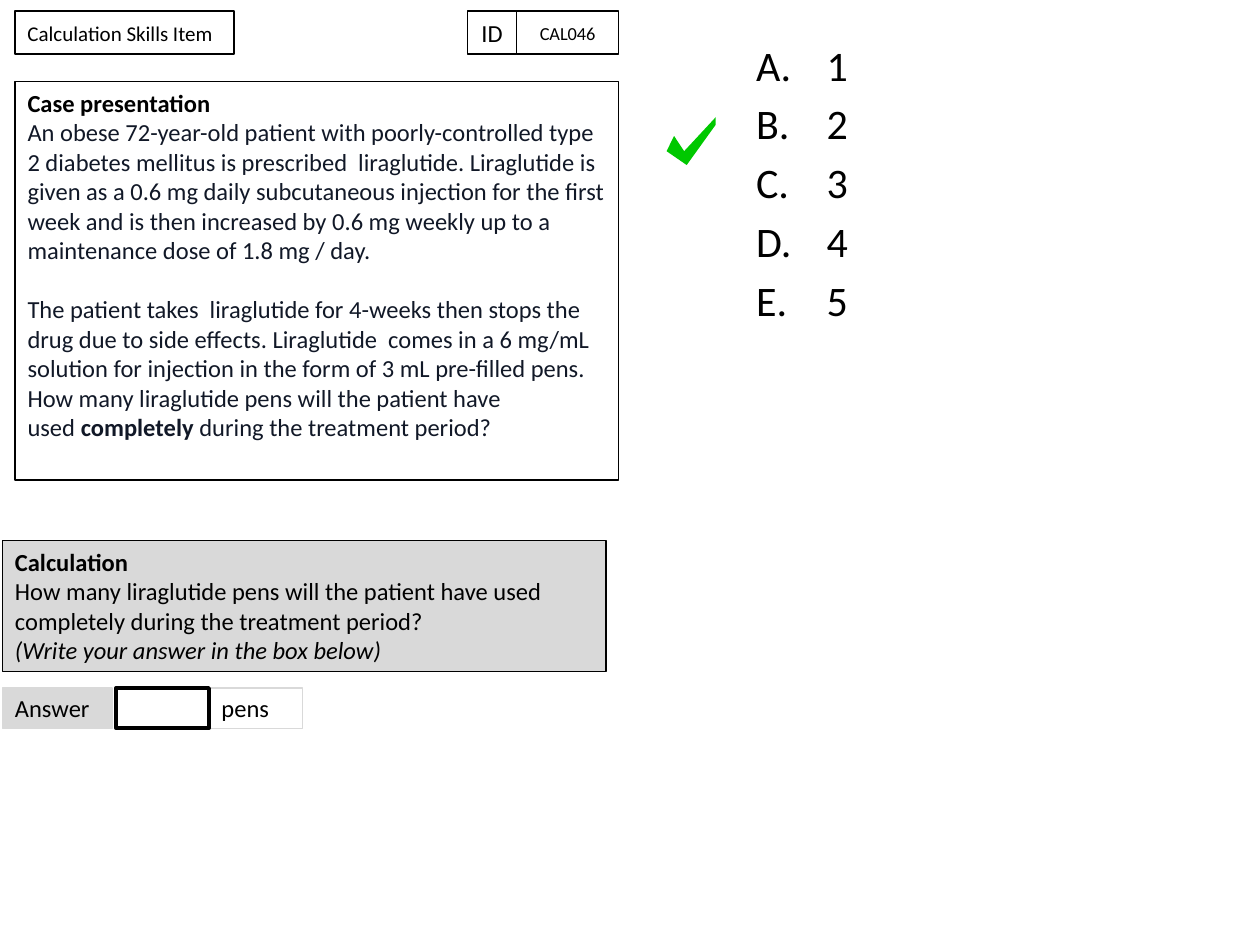
import pptx
import pptx.dml.color
import pptx.enum.text
import pptx.util
from pptx.util import Inches

COLOURS = {"ink": "000000", "body": "111827", "grey": "D9D9D9",
           "white": "FFFFFF", "tick": "00C800"}
ALIGN = pptx.enum.text.PP_ALIGN
ANCHOR = pptx.enum.text.MSO_ANCHOR
NBSP = chr(160)


def rgb(name):
    return pptx.dml.color.RGBColor.from_string(COLOURS[name])


class Card:
    """Holds the text style and the current page."""
    style = {"name": "Calibri", "size": 14, "color": "ink"}

    def __init__(self, page):
        self.page = page

    def span(self, para, text, **changes):
        span = para.add_run()
        span.text = text
        for key, value in {**self.style, **changes}.items():
            if key == "color":
                span.font.color.rgb = rgb(value)
            else:
                setattr(span.font, key, pptx.util.Pt(value) if key == "size" else value)

    def paint(self, shape, fill, line=None, width=0.75):
        shape.shadow.inherit = False
        if fill:
            shape.fill.solid()
            shape.fill.fore_color.rgb = rgb(fill)
        else:
            shape.fill.background()
        if line:
            shape.line.color.rgb = rgb(line)
            shape.line.width = pptx.util.Pt(width)
        else:
            shape.line.fill.background()

    def box(self, place, paras=(), fill=None, line="ink", width=0.75,
            align=ALIGN.LEFT, anchor=ANCHOR.MIDDLE):
        """Each paragraph is (space before, [(text, format changes), ...])."""
        box = self.page.shapes.add_shape(
            pptx.enum.shapes.MSO_SHAPE.RECTANGLE, *map(Inches, place))
        self.paint(box, fill, line, width)
        frame = box.text_frame
        frame.word_wrap = True
        frame.vertical_anchor = anchor
        for index, (space, spans) in enumerate(paras):
            para = frame.add_paragraph() if index else frame.paragraphs[0]
            para.alignment = align
            if space:
                para.space_before = pptx.util.Pt(space)
            for text, changes in spans:
                self.span(para, text, **changes)

    def label(self, place, text, size=14, **options):
        self.box(place, [(0, [(text, {"size": size})])], **options)

    def options(self, place, answers):
        """Lettered answers in the body placeholder."""
        body = self.page.placeholders[1]
        body.left, body.top, body.width, body.height = map(Inches, place)
        frame = body.text_frame
        for index, answer in enumerate(answers):
            para = frame.add_paragraph() if index else frame.paragraphs[0]
            para.space_before = pptx.util.Pt(4.8 if index else 0)
            props = para._p.get_or_add_pPr()
            props.set("marL", str(Inches(0.56)))
            props.set("indent", str(-Inches(0.56)))
            bullet = pptx.oxml.parse_xml(
                '<a:buAutoNum xmlns:a="http://schemas.openxmlformats.org/'
                'drawingml/2006/main" type="alphaUcPeriod"/>')
            props.append(bullet)
            self.span(para, answer, size=24)

    def outline(self, points, fill):
        start, *rest = [tuple(map(Inches, point)) for point in points]
        builder = self.page.shapes.build_freeform(*start)
        builder.add_line_segments(rest, close=True)
        self.paint(builder.convert_to_shape(), fill)


def main():
    deck = pptx.Presentation()
    deck.slide_width, deck.slide_height = Inches(10), Inches(7.5)
    page = deck.slides.add_slide(deck.slide_layouts[1])
    title = page.shapes.title._element
    title.getparent().remove(title)
    card = Card(page)

    # Answer options
    card.options((5.9, 0.26, 3.31, 6.4), "12345")

    # Header
    card.label((0.12, 0.09, 1.74, 0.34), "Calculation Skills Item", 12,
               fill="white", width=1)
    card.label((4.1, 0.09, 0.81, 0.34), "CAL046", 10.5,
               fill="white", width=1, align=ALIGN.CENTER)
    card.label((3.71, 0.09, 0.39, 0.34), "ID", width=1, align=ALIGN.CENTER)

    # Case presentation
    plain = {"color": "body"}
    bold = {"bold": True}
    card.box((0.12, 0.65, 4.79, 3.16), [
        (0, [("Case presentation", bold)]),
        (0, [("An obese 72-year-old patient with poorly-controlled type 2 diabetes "
              "mellitus is prescribed  liraglutide. Liraglutide is given as a 0.6 mg "
              "daily subcutaneous injection for the first week and is then increased "
              "by 0.6 mg weekly up to a maintenance dose of 1.8 mg / day.", plain)]),
        (17, [("The patient takes  liraglutide for 4-weeks then stops the drug due to "
               "side effects. Liraglutide  comes in a 6 mg/mL solution for injection "
               "in the form of 3 mL pre-filled pens.", plain)]),
        (0, [("How many liraglutide pens will the patient have used" + NBSP, plain),
             ("completely", {**plain, **bold}),
             (NBSP + "during the treatment period?", plain)]),
    ], anchor=ANCHOR.TOP)

    # Calculation question
    card.box((0.02, 4.29, 4.79, 1.04), [
        (0, [("Calculation", bold)]),
        (0, [("How many liraglutide pens will the patient have used completely "
              "during the treatment period?", {})]),
        (0, [("(Write your answer in the box below)", {"italic": True})]),
    ], fill="grey", anchor=ANCHOR.TOP)

    # Answer row
    card.label((0.02, 5.46, 0.87, 0.32), "Answer", fill="grey", line="grey")
    card.label((1.66, 5.46, 0.74, 0.32), "pens", line="grey")
    card.box((0.92, 5.46, 0.74, 0.32), fill="white", width=2)

    # Tick beside the right option
    card.outline([(5.35, 1.08), (5.29, 1.2), (5.45, 1.31),
                  (5.68, 0.99), (5.68, 0.93), (5.43, 1.2)], "tick")

    deck.save("out.pptx")


if __name__ == "__main__":
    main()
